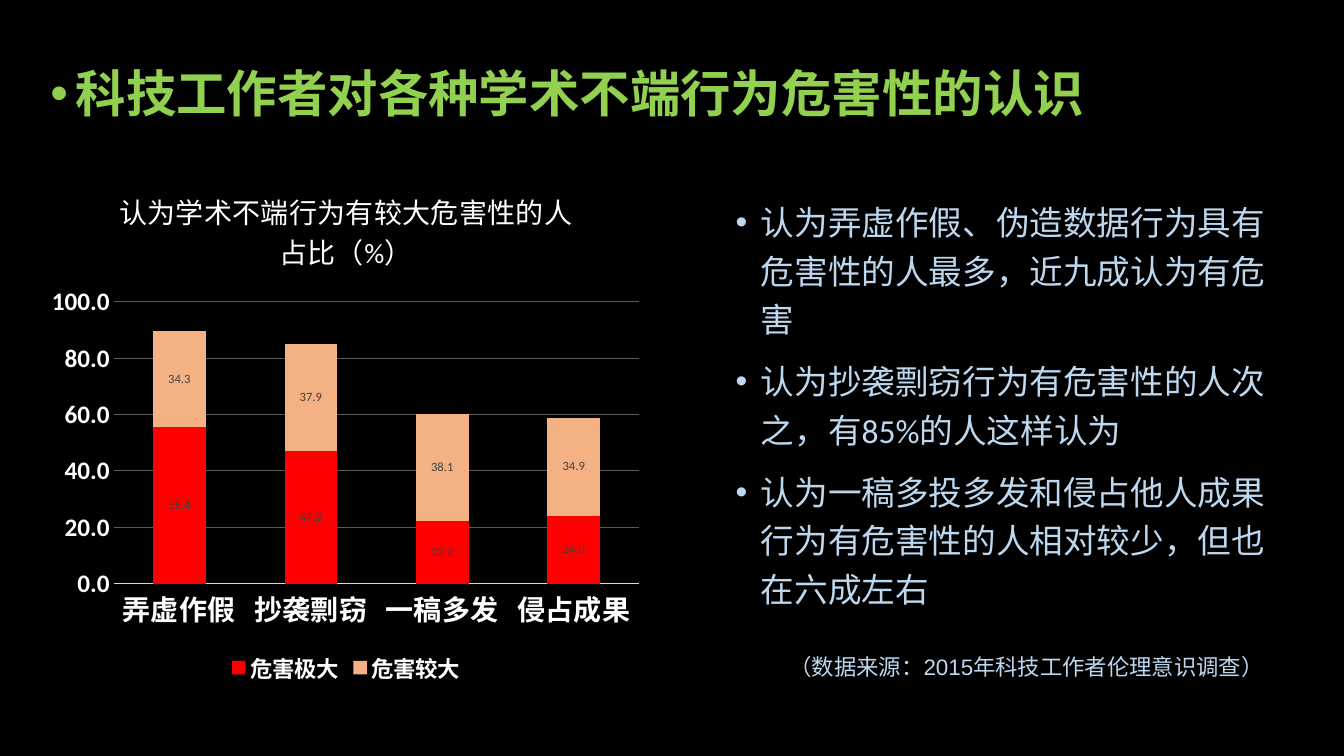
from lxml.etree import SubElement
from pptx import Presentation
from pptx.chart.data import CategoryChartData
from pptx.dml.color import RGBColor
from pptx.enum.chart import XL_CHART_TYPE, XL_LABEL_POSITION, XL_LEGEND_POSITION, XL_TICK_MARK
from pptx.enum.text import MSO_ANCHOR, MSO_AUTO_SIZE, PP_ALIGN
from pptx.oxml import parse_xml
from pptx.oxml.ns import nsdecls, qn
from pptx.util import Inches, Pt

WIDTH, HEIGHT = Inches(13.33), Inches(7.5)
CJK_FONT = "Noto Sans CJK SC"
WHITE, PALE_BLUE, GREEN = "FFFFFF", "BDD7EE", "92D050"
TITLE = "科技工作者对各种学术不端行为危害性的认识"
CHART_TITLE = "认为学术不端行为有较大危害性的人占比（%）"
FINDINGS = [
    "认为弄虚作假、伪造数据行为具有危害性的人最多，近九成认为有危害",
    "认为抄袭剽窃行为有危害性的人次之，有85%的人这样认为",
    "认为一稿多投多发和侵占他人成果行为有危害性的人相对较少，但也在六成左右",
]
SOURCE_NOTE = "（数据来源：2015年科技工作者伦理意识调查）"
CATEGORIES = ["弄虚作假", "抄袭剽窃", "一稿多发", "侵占成果"]
SERIES = [
    ("危害极大", "FF0000", (55.4, 47.2, 22.2, 24.0)),
    ("危害较大", "F4B183", (34.3, 37.9, 38.1, 34.9)),
]


def color(code):
    """Turn a hex string into a colour."""
    return RGBColor.from_string(code)


def area(left, top, width, height):
    """Turn shares of the slide into left, top, width and height."""
    return int(left * WIDTH), int(top * HEIGHT), int(width * WIDTH), int(height * HEIGHT)


def style_font(font, size, code, name, bold=False):
    """Set size, colour, typeface and weight of a font."""
    font.size, font.name, font.bold = Pt(size), name, bold
    font.color.rgb = color(code)


def fill_text(shape, texts, size, code, name, bold=False, bulleted=True):
    """Write paragraphs that share one style into a shape."""
    frame = shape.text_frame
    frame.word_wrap = True
    frame.auto_size = MSO_AUTO_SIZE.NONE
    frame.vertical_anchor = MSO_ANCHOR.TOP
    frame.text = "\n".join(texts)
    for paragraph in frame.paragraphs:
        paragraph.alignment = PP_ALIGN.LEFT
        paragraph.line_spacing = 1.2
        paragraph.space_before = Pt(10)
        if bulleted:
            properties = paragraph._p.get_or_add_pPr()
            properties.set("marL", str(Inches(0.25)))
            properties.set("indent", str(-Inches(0.25)))
            SubElement(properties, qn("a:buFont")).set("typeface", "Arial")
            SubElement(properties, qn("a:buChar")).set("char", "•")
        style_font(paragraph.font, size, code, name, bold)


def add_text(slide, place, texts, size, name, bulleted):
    """Add a text box in the pale blue of the right column."""
    shape = slide.shapes.add_textbox(*place)
    fill_text(shape, texts, size, PALE_BLUE, name, bulleted=bulleted)


def style_axes(chart):
    """Format both axes and the grid lines."""
    category_axis, value_axis = chart.category_axis, chart.value_axis
    for axis, size, name in ((category_axis, 20, CJK_FONT), (value_axis, 18, "Calibri")):
        axis.major_tick_mark = axis.minor_tick_mark = XL_TICK_MARK.NONE
        style_font(axis.tick_labels.font, size, WHITE, name, True)
    value_axis.minimum_scale, value_axis.maximum_scale, value_axis.major_unit = 0, 100, 20
    value_axis.tick_labels.number_format = "###0.0"
    value_axis.tick_labels.number_format_is_linked = False
    value_axis.format.line.fill.background()
    for line, code in ((category_axis.format.line, "D9D9D9"),
                       (value_axis.major_gridlines.format.line, "595959")):
        line.color.rgb = color(code)
        line.width = Pt(0.75)


def style_series(plot):
    """Colour the stacked columns and label their values."""
    plot.gap_width, plot.overlap = 150, 100
    plot.vary_by_categories = False
    for series, (_, code, _) in zip(plot.series, SERIES):
        series.format.fill.solid()
        series.format.fill.fore_color.rgb = color(code)
        labels = series.data_labels
        labels.show_value = True
        labels.position = XL_LABEL_POSITION.CENTER
        labels.number_format, labels.number_format_is_linked = "###0.0", False
        style_font(labels.font, 9, "404040", "Calibri")


def place_plot(chart, **shares):
    """Fix the inner plot area at shares of the chart."""
    plot_area = chart._chartSpace.chart.plotArea
    for layout in plot_area.findall(qn("c:layout")):
        plot_area.remove(layout)
    modes = '<c:layoutTarget val="inner"/><c:xMode val="edge"/><c:yMode val="edge"/>'
    sizes = "".join(f'<c:{key} val="{value}"/>' for key, value in shares.items())
    plot_area.insert(0, parse_xml(
        f'<c:layout {nsdecls("c")}><c:manualLayout>{modes}{sizes}</c:manualLayout></c:layout>'))


def add_harm_chart(slide, place):
    """Add the stacked column chart of perceived harm."""
    data = CategoryChartData(number_format="###0.0")
    data.categories = CATEGORIES
    for name, _, values in SERIES:
        data.add_series(name, values)
    chart = slide.shapes.add_chart(XL_CHART_TYPE.COLUMN_STACKED, *place, data).chart
    style_font(chart.font, 10, "000000", "Calibri")
    chart.has_title = True
    chart.chart_title.include_in_layout = False
    chart.chart_title.text_frame.text = CHART_TITLE
    style_font(chart.chart_title.text_frame.paragraphs[0].font, 20, WHITE, "Calibri")
    chart.has_legend = True
    chart.legend.position = XL_LEGEND_POSITION.BOTTOM
    chart.legend.include_in_layout = False
    style_font(chart.legend.font, 16, WHITE, "Calibri", True)
    style_axes(chart)
    style_series(chart.plots[0])
    place_plot(chart, x=0.12, y=0.26, w=0.86, h=0.54)


def main():
    """Build the slide and save it."""
    presentation = Presentation()
    presentation.slide_width, presentation.slide_height = WIDTH, HEIGHT
    slide = presentation.slides.add_slide(presentation.slide_layouts[5])
    slide.background.fill.solid()
    slide.background.fill.fore_color.rgb = color("000000")
    title = slide.shapes.title
    title.left, title.top, title.width, title.height = area(0.03, 0.06, 0.94, 0.19)
    fill_text(title, [TITLE], 36, GREEN, CJK_FONT, True)
    add_harm_chart(slide, area(0.03, 0.22, 0.455, 0.69))
    add_text(slide, area(0.54, 0.25, 0.415, 0.58), FINDINGS, 24, "Calibri", True)
    add_text(slide, area(0.58, 0.85, 0.375, 0.08), [SOURCE_NOTE], 16, "Arial", False)
    presentation.save("out.pptx")


if __name__ == "__main__":
    main()
